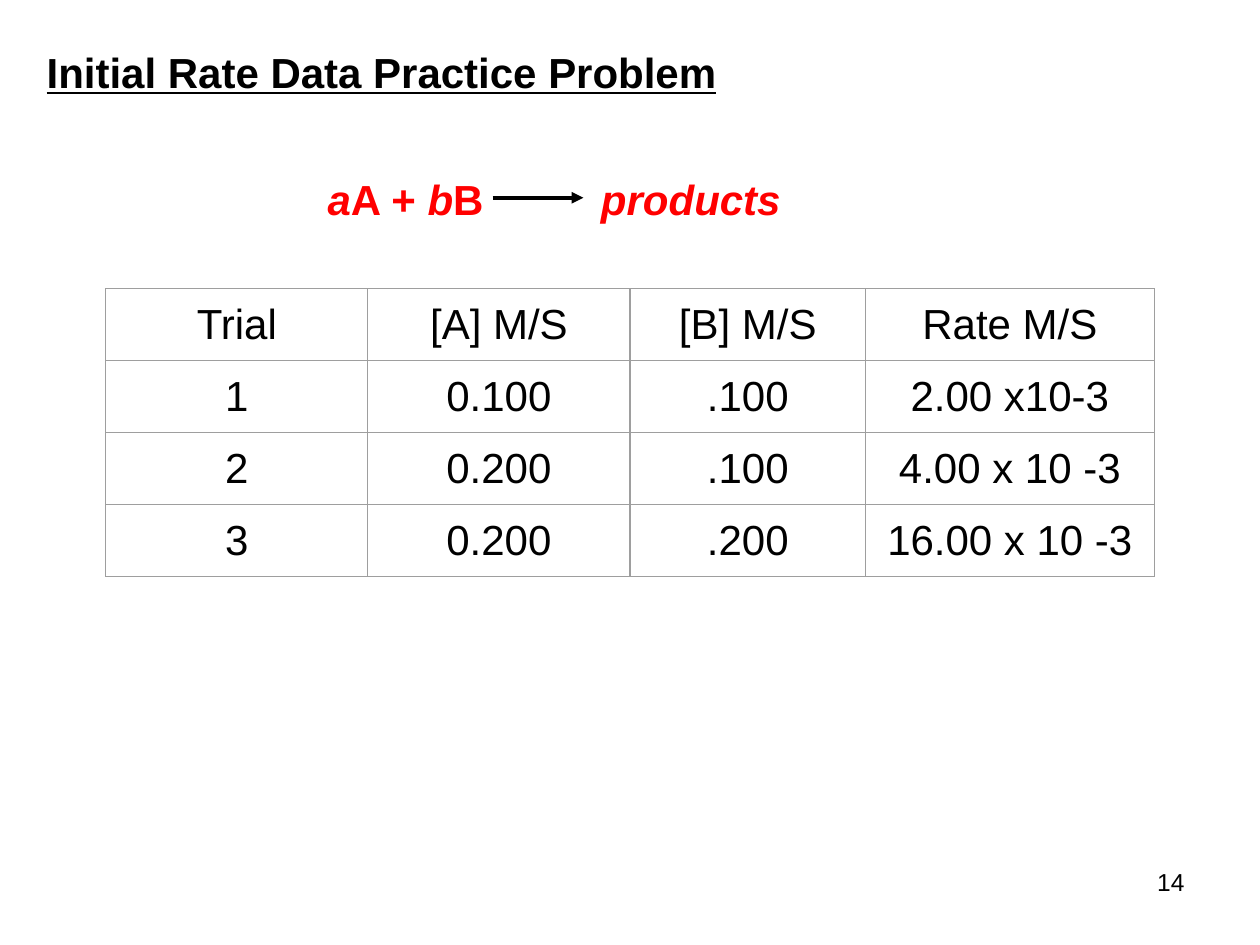
from pptx import Presentation
from pptx.dml.color import RGBColor
from pptx.enum.shapes import MSO_CONNECTOR as Connector
from pptx.enum.text import MSO_ANCHOR as Anchor, MSO_AUTO_SIZE as AutoSize, PP_ALIGN as Align
from pptx.oxml.ns import qn
from pptx.util import Inches, Pt
from lxml.etree import SubElement

BLACK = RGBColor(0x00, 0x00, 0x00)
RED = RGBColor(0xFF, 0x00, 0x00)
GRID_GREY = RGBColor(0x9E, 0x9E, 0x9E)
FONT = "Arial"
BODY_SIZE = 24
INSET = 0.1

COLUMN_WIDTHS = [2.08, 2.08, 1.87, 2.29]
ROW_HEIGHT = 0.57
TRIALS = [
    ["Trial", "[A] M/S", "[B] M/S", "Rate M/S"],
    ["1", "0.100", ".100", "2.00 x10-3"],
    ["2", "0.200", ".100", "4.00 x 10 -3"],
    ["3", "0.200", ".200", "16.00 x 10 -3"],
]


def add_run(paragraph, text, color=BLACK, size=BODY_SIZE, bold=False, italic=False):
    run = paragraph.add_run()
    run.text = text
    font = run.font
    font.name, font.size, font.bold, font.italic = FONT, Pt(size), bold, italic
    font.color.rgb = color
    return run


def set_frame(frame, left=INSET, top=INSET, anchor=Anchor.TOP):
    frame.word_wrap = True
    frame.auto_size = AutoSize.NONE
    frame.vertical_anchor = anchor
    frame.margin_left, frame.margin_right = Inches(left), Inches(INSET)
    frame.margin_top = frame.margin_bottom = Inches(top)
    return frame.paragraphs[0]


def add_text_box(slide, box, **frame_options):
    frame = slide.shapes.add_textbox(*map(Inches, box)).text_frame
    return set_frame(frame, **frame_options)


def add_title(slide, text):
    title = slide.shapes.title
    title.left, title.top, title.width, title.height = map(Inches, (0.27, 0.27, 8.78, 0.76))
    paragraph = set_frame(title.text_frame)
    paragraph.alignment = Align.LEFT
    add_run(paragraph, text, bold=True).font.underline = True


def add_equation(slide):
    # The inset places the reactants, the tab stop places the products
    equation = add_text_box(slide, (0.29, 1.12, 8.87, 0.92), left=2.31, anchor=Anchor.MIDDLE)
    tabs = SubElement(equation._p.get_or_add_pPr(), qn("a:tabLst"))
    SubElement(tabs, qn("a:tab"), pos=str(Inches(2.17)), algn="l")
    for text, italic in [("a", True), ("A + ", False), ("b", True), ("B\t", False), ("products", True)]:
        add_run(equation, text, RED, bold=True, italic=italic)


def add_arrow(slide, start, end):
    arrow = slide.shapes.add_connector(Connector.STRAIGHT, *map(Inches, start + end))
    arrow.line.color.rgb = BLACK
    arrow.line.width = Pt(2.25)
    SubElement(arrow.line._get_or_add_ln(), qn("a:tailEnd"), type="triangle")
    SubElement(arrow._element.spPr, qn("a:effectLst"))


def set_borders(cell, color, width):
    properties = cell._tc.get_or_add_tcPr()
    for side in ("lnL", "lnR", "lnT", "lnB"):
        border = SubElement(properties, qn(f"a:{side}"), w=str(Pt(width)))
        fill = SubElement(border, qn("a:solidFill"))
        SubElement(fill, qn("a:srgbClr"), val=str(color))


def add_rate_table(slide, left, top):
    size = (sum(COLUMN_WIDTHS), ROW_HEIGHT * len(TRIALS))
    table = slide.shapes.add_table(
        len(TRIALS), len(COLUMN_WIDTHS), *map(Inches, (left, top, *size))).table
    table.first_row = table.horz_banding = False
    for column, width in zip(table.columns, COLUMN_WIDTHS):
        column.width = Inches(width)
    for row, values in zip(table.rows, TRIALS):
        row.height = Inches(ROW_HEIGHT)
        for cell, value in zip(row.cells, values):
            cell.margin_left = cell.margin_right = Inches(INSET)
            cell.margin_top = cell.margin_bottom = Inches(INSET)
            set_borders(cell, GRID_GREY, 0.75)
            cell.fill.background()
            paragraph = cell.text_frame.paragraphs[0]
            paragraph.alignment = Align.CENTER
            add_run(paragraph, value)


def main():
    deck = Presentation()
    deck.slide_width, deck.slide_height = Inches(10), Inches(7.5)
    slide = deck.slides.add_slide(deck.slide_layouts[5])

    # Heading
    add_title(slide, "Initial Rate Data Practice Problem")

    # Reaction
    add_equation(slide)
    add_arrow(slide, (3.91, 1.57), (4.63, 1.57))

    # Measured rates
    add_rate_table(slide, 0.84, 2.29)

    # Page number
    page_number = add_text_box(slide, (7.17, 6.83, 2.33, 0.52), top=0.05)
    page_number.alignment = Align.RIGHT
    add_run(page_number, "14", size=14)

    deck.save("out.pptx")


if __name__ == "__main__":
    main()
